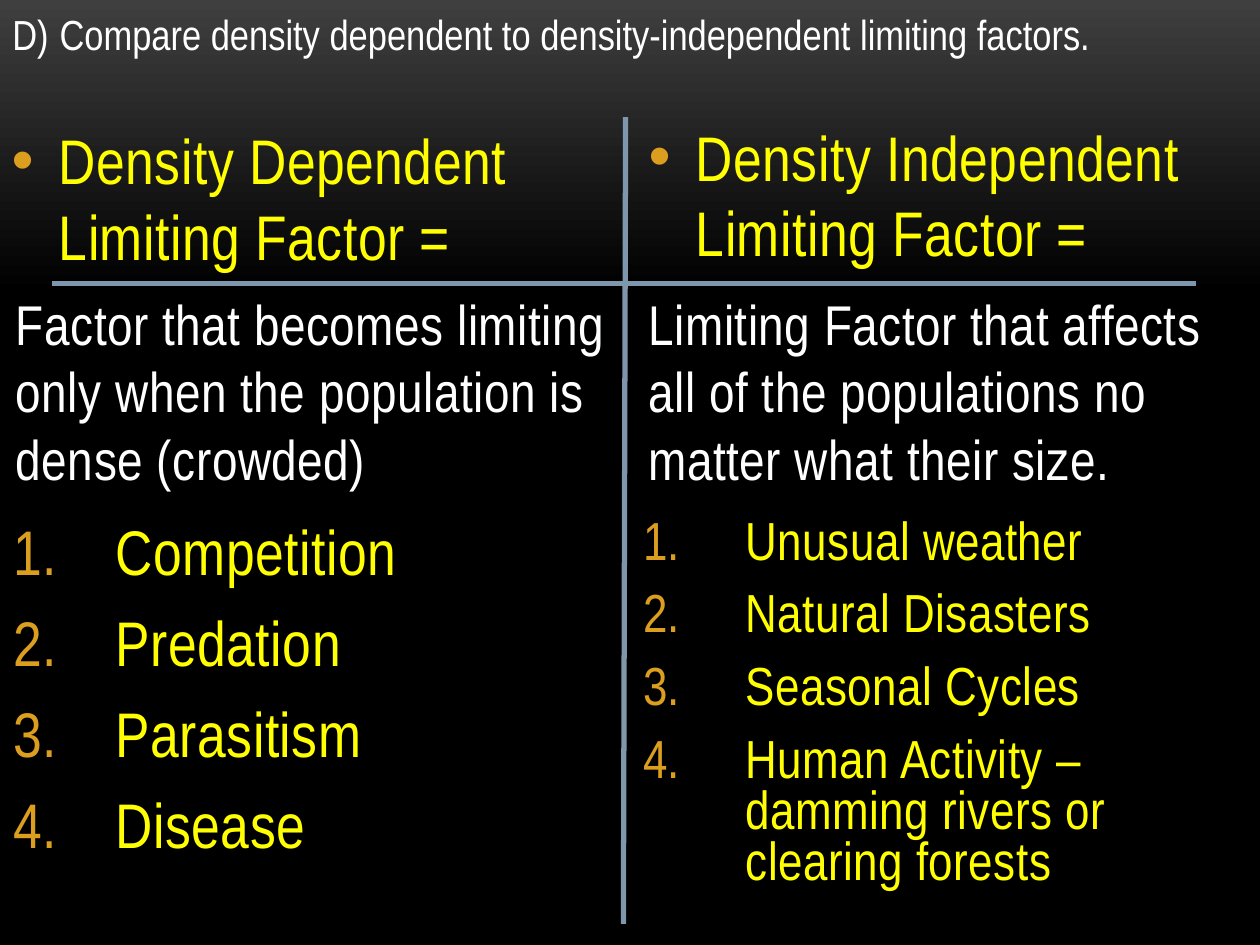
"""Build a slide comparing density-dependent and density-independent limiting factors."""
from lxml.etree import SubElement
from pptx import Presentation
from pptx.dml.color import RGBColor
from pptx.enum.shapes import MSO_CONNECTOR
from pptx.oxml.ns import qn
from pptx.util import Pt

FONT = "Arial Narrow"
WHITE, YELLOW, GOLD, STEEL = "FFFFFF", "FFFF00", "DC9E1F", "7E97AD"


def color(value):
    return RGBColor.from_string(value)


def add_text(lines, left, top, width, height, size, fill=WHITE, bullet=None, numbering=None,
             start=1, marker=GOLD, indent=0, line_spacing=1.0, tracking=30):
    shape = slide.shapes.add_textbox(Pt(left), Pt(top), Pt(width), Pt(height))
    frame = shape.text_frame
    frame.word_wrap = True
    for index, line in enumerate(lines):
        paragraph = frame.paragraphs[0] if index == 0 else frame.add_paragraph()
        paragraph.line_spacing = line_spacing
        paragraph.space_before = Pt(size * 0.2 if index else 0)
        paragraph.space_after = Pt(6)
        if bullet or numbering:
            properties = paragraph._p.get_or_add_pPr()
            properties.set("marL", str(Pt(indent)))
            properties.set("indent", str(-Pt(indent)))
            SubElement(SubElement(properties, qn("a:buClr")), qn("a:srgbClr"), val=marker)
            if bullet:
                SubElement(properties, qn("a:buFont"), typeface="Arial")
                SubElement(properties, qn("a:buChar"), char=bullet)
            else:
                SubElement(properties, qn("a:buAutoNum"), type=numbering, startAt=str(start))
        run = paragraph.add_run()
        run.text = line
        run.font.name = FONT
        run.font.size = Pt(size)
        run.font.color.rgb = color(fill)
        run._r.get_or_add_rPr().set("spc", str(tracking))


presentation = Presentation()
presentation.slide_width, presentation.slide_height = Pt(720), Pt(540)
slide = presentation.slides.add_slide(presentation.slide_layouts[6])

background = slide.background.fill
background.gradient()
background.gradient_angle = 270
for stop, (position, value) in zip(background.gradient_stops, [(0, "3F3F3F"), (0.31, "000000")]):
    stop.position = position
    stop.color.rgb = color(value)

add_text(["Compare density dependent to density-independent limiting factors."],
         0, 1.5, 642, 36, 24, numbering="alphaUcParenR", start=4, marker=WHITE,
         indent=27, tracking=0)

for heading, left, top in [
    ("Density Dependent Limiting Factor =", -0.5, 66),
    ("Density Independent Limiting Factor =", 363.5, 64),
]:
    add_text([heading], left, top, 348, 216, 36, fill=YELLOW, bullet="•", indent=27)

for start_x, start_y, end_x, end_y in [(29.5, 162, 683.5, 162), (357.5, 67, 356.25, 528)]:
    connector = slide.shapes.add_connector(
        MSO_CONNECTOR.STRAIGHT, Pt(start_x), Pt(start_y), Pt(end_x), Pt(end_y))
    connector.line.color.rgb = color(STEEL)
    connector.line.width = Pt(3)
    SubElement(connector._element.spPr, qn("a:effectLst"))

for definition, left, width, height in [
    ("Factor that becomes limiting only when the population is dense (crowded)", 2, 354, 312),
    ("Limiting Factor that affects all of the populations no matter what their size.",
     363.5, 350, 322),
]:
    add_text([definition], left, 162, width, height, 32)

for examples, left, top, width, height, size, line_spacing in [
    (["Competition", "Predation", "Parasitism", "Disease"], 0.5, 294, 348, 216, 36, 0.9),
    (["Unusual weather", "Natural Disasters", "Seasonal Cycles",
      "Human Activity – damming rivers or clearing forests"], 360.5, 293, 359, 235, 30.6, 0.8),
]:
    add_text(examples, left, top, width, height, size, fill=YELLOW, numbering="arabicPeriod",
             indent=58.5, line_spacing=line_spacing)

presentation.save("out.pptx")
